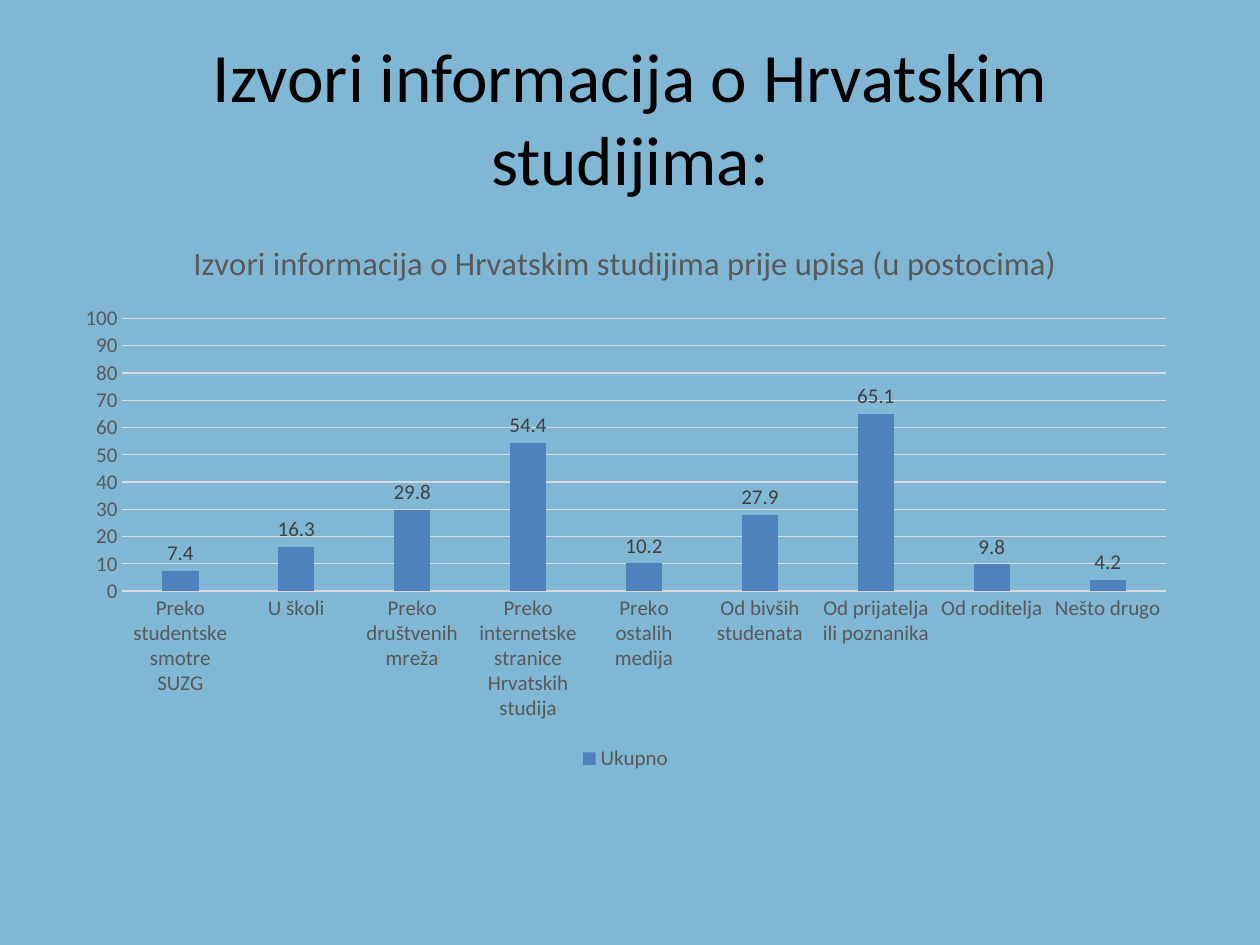
from pptx import Presentation
from pptx.chart.data import CategoryChartData
from pptx.dml.color import RGBColor
from pptx.enum.chart import XL_CHART_TYPE, XL_LABEL_POSITION, XL_LEGEND_POSITION, XL_TICK_MARK
from pptx.enum.text import MSO_ANCHOR, PP_ALIGN
from pptx.util import Inches, Pt

COLUMN = XL_CHART_TYPE.COLUMN_CLUSTERED
BOTTOM = XL_LEGEND_POSITION.BOTTOM
OUTSIDE = XL_LABEL_POSITION.OUTSIDE_END
NO_TICK = XL_TICK_MARK.NONE
MIDDLE = MSO_ANCHOR.MIDDLE
CENTER = PP_ALIGN.CENTER

COLORS = {
    "back": "80B7D4",
    "title": "000000",
    "text": "595959",
    "label": "404040",
    "grid": "D9D9D9",
    "bar": "4F81BD",
}
FONT = "Calibri"
SOURCES = {
    "Preko studentske smotre SUZG": 7.4,
    "U školi": 16.3,
    "Preko društvenih mreža": 29.8,
    "Preko internetske stranice Hrvatskih studija": 54.4,
    "Preko ostalih medija": 10.2,
    "Od bivših studenata": 27.9,
    "Od prijatelja ili poznanika": 65.1,
    "Od roditelja": 9.8,
    "Nešto drugo": 4.2,
}


def style(font, size=12, color="text"):
    font.name = FONT
    font.size = Pt(size)
    font.bold = False
    font.color.rgb = RGBColor.from_string(COLORS[color])


def write(frame, text, **look):
    frame.text = text
    para = frame.paragraphs[0]
    para.alignment = CENTER
    style(para.runs[0].font, **look)


# Slide and background
prs = Presentation()
prs.slide_width, prs.slide_height = Inches(10), Inches(7.5)
slide = prs.slides.add_slide(prs.slide_layouts[5])
fill = slide.background.fill
fill.solid()
fill.fore_color.rgb = RGBColor.from_string(COLORS["back"])

# Title
title = slide.shapes.title
title.left, title.top = Inches(0.5), Inches(0.3)
title.width, title.height = Inches(9), Inches(1.25)
title.text_frame.vertical_anchor = MIDDLE
write(title.text_frame, "Izvori informacija o Hrvatskim studijima:", size=39.6, color="title")

# Chart
data = CategoryChartData(number_format="General")
data.categories = SOURCES.keys()
data.add_series("Ukupno", SOURCES.values())
chart = slide.shapes.add_chart(
    COLUMN, Inches(0.5), Inches(1.72), Inches(8.93), Inches(4.44), data
).chart
style(chart.font)
write(chart.chart_title.text_frame,
      "Izvori informacija o Hrvatskim studijima prije upisa (u postocima)", size=18.6)
chart.chart_title.include_in_layout = False

# Legend
chart.has_legend = True
chart.legend.position = BOTTOM
chart.legend.include_in_layout = False
style(chart.legend.font)

# Axes and grid
cats, vals = chart.category_axis, chart.value_axis
for axis in (cats, vals):
    axis.major_tick_mark = axis.minor_tick_mark = NO_TICK
    style(axis.tick_labels.font)
vals.minimum_scale, vals.maximum_scale, vals.major_unit = 0, 100, 10
vals.format.line.fill.background()
vals.has_major_gridlines = True
for line in (cats.format.line, vals.major_gridlines.format.line):
    line.width = Pt(0.75)
    line.color.rgb = RGBColor.from_string(COLORS["grid"])

# Bars and labels
plot = chart.plots[0]
plot.vary_by_categories = False
plot.gap_width, plot.overlap = 219, -27
bars = plot.series[0]
bars.format.fill.solid()
bars.format.fill.fore_color.rgb = RGBColor.from_string(COLORS["bar"])
labels = bars.data_labels
labels.show_value = True
labels.position = OUTSIDE
style(labels.font, color="label")

prs.save("out.pptx")
